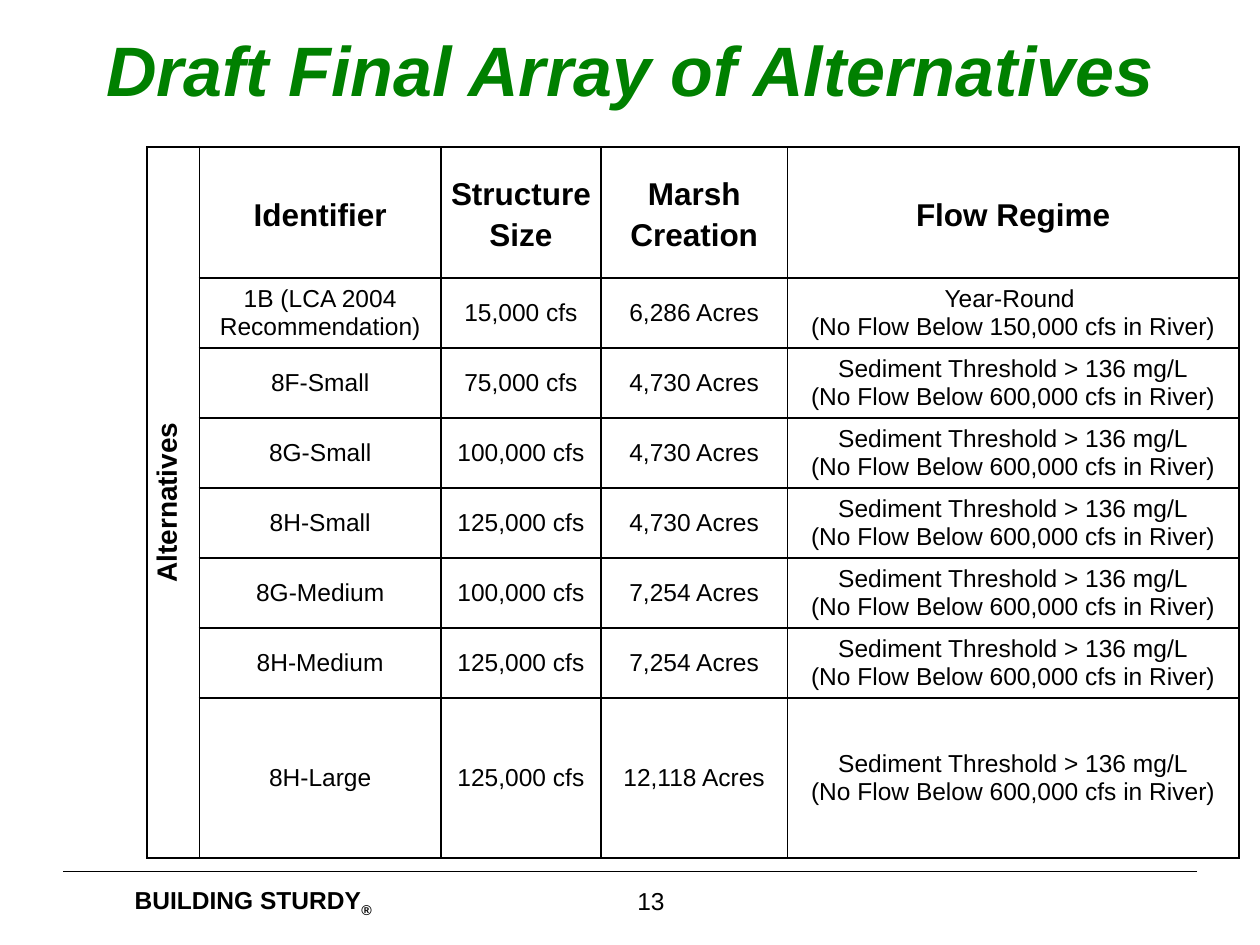
from dataclasses import dataclass

from lxml.etree import SubElement
from pptx import Presentation
from pptx.dml.color import RGBColor
from pptx.enum.shapes import MSO_CONNECTOR as Link
from pptx.enum.text import MSO_ANCHOR as Anchor, MSO_AUTO_SIZE as Fit, PP_ALIGN as Align
from pptx.oxml.ns import qn
from pptx.util import Pt

FONT = "Arial"
BLACK = "000000"
GREEN = "008000"


@dataclass
class Style:
    size: float
    bold: bool = False
    italic: bool = False
    color: str = BLACK
    gap: float = 0
    lead: float = 1.0
    align: Align = Align.CENTER


@dataclass
class Plan:
    name: str
    flow: str
    marsh: str
    rule: str


HEAD = Style(18, bold=True, gap=3, lead=1.15)
SIDE = Style(16, bold=True, lead=1.15)
BODY = Style(14, gap=6)
TIGHT = Style(14)

YEAR = "Year-Round \n(No Flow Below 150,000 cfs in River)"
SILT = "Sediment Threshold > 136 mg/L\n(No Flow Below 600,000 cfs in River)"
HEADS = ["Identifier", "Structure Size", "Marsh Creation", "Flow Regime"]
PLANS = [
    Plan("1B (LCA 2004 Recommendation)", "15,000 cfs", "6,286 Acres", YEAR),
    Plan("8F-Small", "75,000 cfs", "4,730 Acres", SILT),
    Plan("8G-Small", "100,000 cfs", "4,730 Acres", SILT),
    Plan("8H-Small", "125,000 cfs", "4,730 Acres", SILT),
    Plan("8G-Medium", "100,000 cfs", "7,254 Acres", SILT),
    Plan("8H-Medium", "125,000 cfs", "7,254 Acres", SILT),
    Plan("8H-Large", "125,000 cfs", "12,118 Acres", SILT),
]
COLS = [30, 138, 91.5, 106.5, 258]
ROWS = [75] + [40] * len(PLANS)


def paint(font, color: str) -> None:
    font.color.rgb = RGBColor.from_string(color)


def write(frame, text: str, style: Style) -> None:
    frame.text = text
    for para in frame.paragraphs:
        para.alignment = style.align
        para.line_spacing = style.lead
        para.space_before = para.space_after = Pt(style.gap)
        for run in para.runs:
            font = run.font
            font.name, font.size = FONT, Pt(style.size)
            font.bold, font.italic = style.bold, style.italic
            paint(font, style.color)


def edge(cell) -> None:
    props = cell._tc.get_or_add_tcPr()
    for spot, side in enumerate(("a:lnL", "a:lnR", "a:lnT", "a:lnB")):
        line = SubElement(props, qn(side), w=str(Pt(1)))
        fill = SubElement(line, qn("a:solidFill"))
        SubElement(fill, qn("a:srgbClr"), val=BLACK)
        props.insert(spot, line)


def fill_cell(cell, text: str, style: Style) -> None:
    cell.margin_left = cell.margin_right = Pt(5)
    cell.margin_top = cell.margin_bottom = 0
    cell.vertical_anchor = Anchor.MIDDLE
    write(cell.text_frame, text, style)


def add_text(slide, box: tuple, text: str, style: Style):
    frame = slide.shapes.add_textbox(*map(Pt, box)).text_frame
    frame.word_wrap = True
    write(frame, text, style)
    return frame


def add_grid(slide) -> None:
    shape = slide.shapes.add_table(
        len(ROWS), len(COLS), Pt(84), Pt(84), Pt(sum(COLS)), Pt(sum(ROWS)))
    table = shape.table
    table.first_row = table.horz_banding = False
    for col, width in zip(table.columns, COLS):
        col.width = Pt(width)
    for row, height in zip(table.rows, ROWS):
        row.height = Pt(height)
    for cell in table.iter_cells():
        cell.fill.background()
        edge(cell)

    # Side label over all rows
    side = table.cell(0, 0)
    side.merge(table.cell(len(ROWS) - 1, 0))
    fill_cell(side, "Alternatives", SIDE)
    side._tc.get_or_add_tcPr().set("vert", "vert270")

    # Headings and plans
    for col, text in enumerate(HEADS, 1):
        fill_cell(table.cell(0, col), text, HEAD)
    for row, plan in enumerate(PLANS, 1):
        first = TIGHT if row == 1 else BODY
        fill_cell(table.cell(row, 1), plan.name, first)
        fill_cell(table.cell(row, 2), plan.flow, BODY)
        fill_cell(table.cell(row, 3), plan.marsh, BODY)
        fill_cell(table.cell(row, 4), plan.rule, TIGHT)


def add_foot(slide) -> None:
    rule = slide.shapes.add_connector(Link.STRAIGHT, Pt(684), Pt(498), Pt(36), Pt(498))
    paint(rule.line, BLACK)
    rule.line.width = Pt(0.75)
    SubElement(rule._element.spPr, qn("a:effectLst"))

    # Motto with a lowered mark
    frame = add_text(slide, (77, 505.5, 205, 16.5), "BUILDING STURDY",
                     Style(14, bold=True, align=Align.LEFT))
    frame.margin_left = frame.margin_right = frame.margin_top = frame.margin_bottom = 0
    frame.auto_size = Fit.SHAPE_TO_FIT_TEXT
    mark = frame.paragraphs[0].add_run()
    mark.text = "®"
    font = mark.font
    font.name, font.size, font.bold = FONT, Pt(14), True
    paint(font, BLACK)
    font._element.set("baseline", "-25000")

    # Page number
    add_text(slide, (288, 502.5, 168, 37.5), "13", TIGHT)


def main() -> None:
    deck = Presentation()
    deck.slide_width, deck.slide_height = Pt(720), Pt(540)
    slide = deck.slides.add_slide(deck.slide_layouts[5])

    # Title
    title = slide.shapes.title
    title.left, title.top, title.width, title.height = 0, 0, Pt(720), Pt(78)
    frame = title.text_frame
    frame.vertical_anchor = Anchor.MIDDLE
    frame.auto_size = Fit.NONE
    write(frame, "Draft Final Array of Alternatives",
          Style(40, bold=True, italic=True, color=GREEN))

    add_grid(slide)
    add_foot(slide)
    deck.save("out.pptx")


if __name__ == "__main__":
    main()
